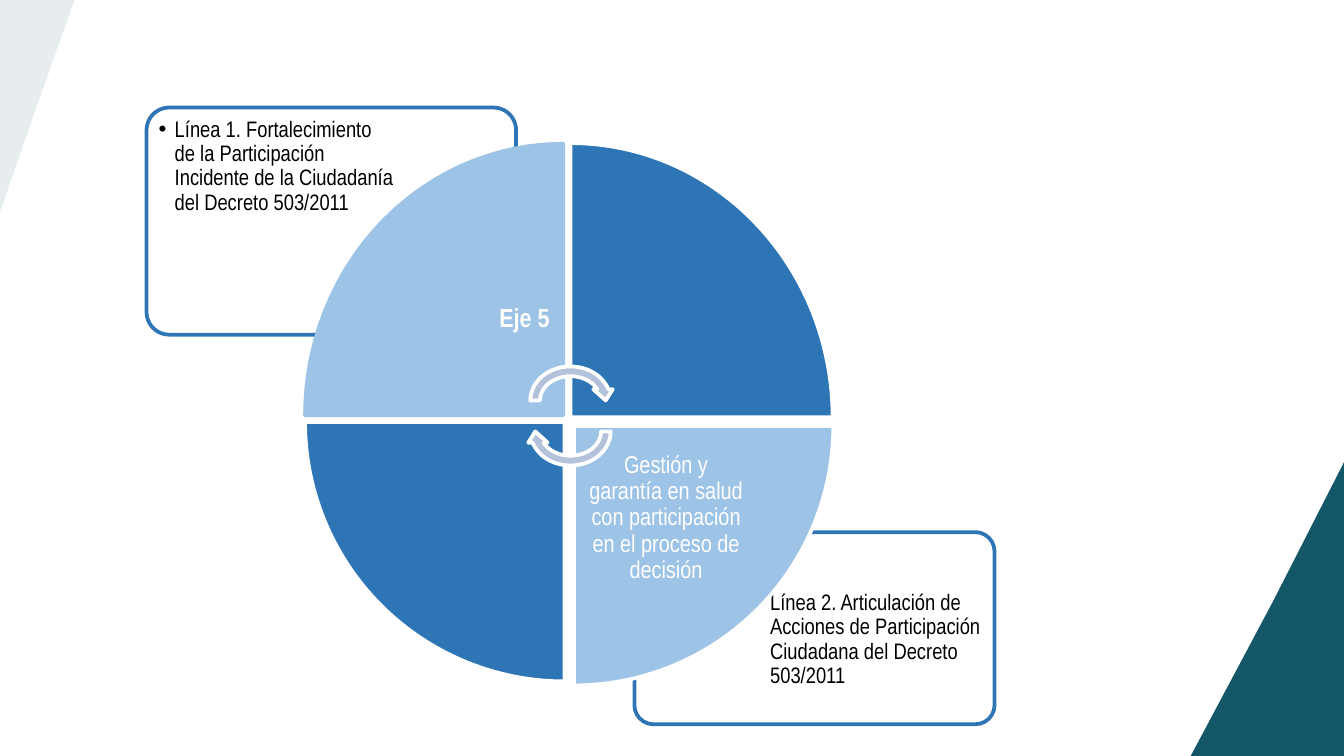
from dataclasses import dataclass

from lxml.etree import SubElement
from pptx import Presentation
from pptx.dml.color import RGBColor
from pptx.enum.shapes import MSO_SHAPE as SHAPE
from pptx.enum.text import MSO_ANCHOR as ANCHOR, MSO_AUTO_SIZE as AUTO, PP_ALIGN as ALIGN
from pptx.oxml.ns import qn
from pptx.util import Pt

SCALE = 4572  # EMU per px, 200 px to the inch
W, H = 2000, 1125


@dataclass(frozen=True)
class Theme:
    font: str = "Arial Narrow"
    teal: str = "145768"
    blue: str = "2E75B6"
    light: str = "9DC3E6"
    arrow: str = "B3C1DB"
    white: str = "FFFFFF"
    black: str = "000000"
    line: int = 2
    list_size: int = 12
    label_size: int = 13
    axis_size: int = 14


def add_text(p, text, *, font, size, color, bold=False):
    r = p.add_run()
    r.text = text
    r.font.name, r.font.size, r.font.bold = font, Pt(size), bold
    r.font.color.rgb = RGBColor.from_string(color)


class Deck:
    def __init__(self, prs, theme):
        self.theme = theme
        self.s = prs.slides.add_slide(prs.slide_layouts[3])

    def place(self, sp, box):
        sp.left, sp.top, sp.width, sp.height = (v * SCALE for v in box)

    def paint(self, sp, fill, line=None, alpha=None):
        sp.shadow.inherit = False
        sp.fill.solid()
        sp.fill.fore_color.rgb = RGBColor.from_string(fill)
        if alpha:
            color = sp.fill._xPr.find(qn("a:solidFill"))[0]
            SubElement(color, qn("a:alpha"), val=str(alpha * 1000))
        if line:
            sp.line.color.rgb = RGBColor.from_string(line)
            sp.line.width = Pt(self.theme.line)
        else:
            sp.line.fill.background()

    def shape(self, kind, box, fill, line, rotation=0, alpha=None):
        sp = self.s.shapes.add_shape(kind, *(v * SCALE for v in box))
        sp.rotation = rotation
        self.paint(sp, fill, line, alpha)
        return sp

    def corner(self, points, alpha=None):
        fb = self.s.shapes.build_freeform(*points[0], scale=SCALE)
        fb.add_line_segments(points[1:], close=True)
        self.paint(fb.convert_to_shape(), self.theme.teal, alpha=alpha)

    def frame(self, sp, inset, anchor):
        tf = sp.text_frame
        tf.word_wrap, tf.auto_size, tf.vertical_anchor = True, AUTO.NONE, anchor
        tf.margin_left = tf.margin_right = tf.margin_top = tf.margin_bottom = inset * SCALE
        p = tf.paragraphs[0]
        p.line_spacing, p.space_before = 0.9, Pt(0)
        return p

    def card(self, box):
        t = self.theme
        sp = self.shape(SHAPE.ROUNDED_RECTANGLE, box, t.white, t.blue, alpha=90)
        sp.adjustments[0] = 0.1

    def bullet(self, index, box, text):
        t = self.theme
        sp = self.s.placeholders[index]
        self.place(sp, box)
        tree = sp.element.getparent()
        tree.append(sp.element)  # bring in front of its card
        p = self.frame(sp, 10, ANCHOR.TOP)
        p.alignment = ALIGN.LEFT
        pPr = p._p.get_or_add_pPr()
        pPr.set("marL", str(24 * SCALE))
        pPr.set("indent", str(-24 * SCALE))
        SubElement(pPr, qn("a:buChar"), char="•")
        add_text(p, text, font=t.font, size=t.list_size, color=t.black)

    def label(self, box, text, size, align, inset, bold=False):
        sp = self.s.shapes.add_textbox(*(v * SCALE for v in box))
        p = self.frame(sp, inset, ANCHOR.MIDDLE)
        p.alignment, p.space_after = align, Pt(5)
        add_text(p, text, font=self.theme.font, size=size, color=self.theme.white, bold=bold)


def main():
    prs = Presentation()
    prs.slide_width, prs.slide_height = W * SCALE, H * SCALE
    t = Theme()
    deck = Deck(prs, t)
    title = deck.s.shapes.title.element
    title.getparent().remove(title)

    # Corner decoration
    deck.corner([(1894, 896), (W, 688), (W, H), (1772, H)])
    deck.corner([(52, 166), (0, 316), (0, 0), (111, 0)], alpha=10)

    # Cards with the two action lines
    deck.card((944, 792, 536, 286))
    deck.bullet(2, (1112, 870, 362, 202),
                "Línea 2. Articulación de Acciones de Participación Ciudadana del Decreto 503/2011")
    deck.card((218, 160, 550, 338))
    deck.bullet(1, (226, 166, 370, 238),
                "Línea 1. Fortalecimiento de la Participación Incidente de la Ciudadanía "
                "del Decreto 503/2011")

    # Wheel quadrants, clockwise from top left
    wedges = [
        ((454, 214, 384, 404), t.light, t.light),
        ((840, 222, 408, 390), t.blue, t.white),
        ((854, 634, 386, 386), t.light, t.white),
        ((454, 628, 386, 386), t.blue, t.white),
    ]
    for i, (box, fill, line) in enumerate(wedges):
        deck.shape(SHAPE.PIE_WEDGE, box, fill, line, rotation=90 * i)
    deck.label((568, 332, 272, 286), "Eje 5", t.axis_size, ALIGN.RIGHT, 22, bold=True)
    deck.label((854, 634, 274, 274),
               "Gestión y garantía en salud con participación en el proceso de decisión",
               t.label_size, ALIGN.CENTER, 20)

    # Cycle arrows at the hub
    for top, rotation in ((538, 0), (584, 180)):
        deck.shape(SHAPE.CIRCULAR_ARROW, (782, top, 134, 116), t.arrow, t.white, rotation)

    prs.save("out.pptx")


if __name__ == "__main__":
    main()
